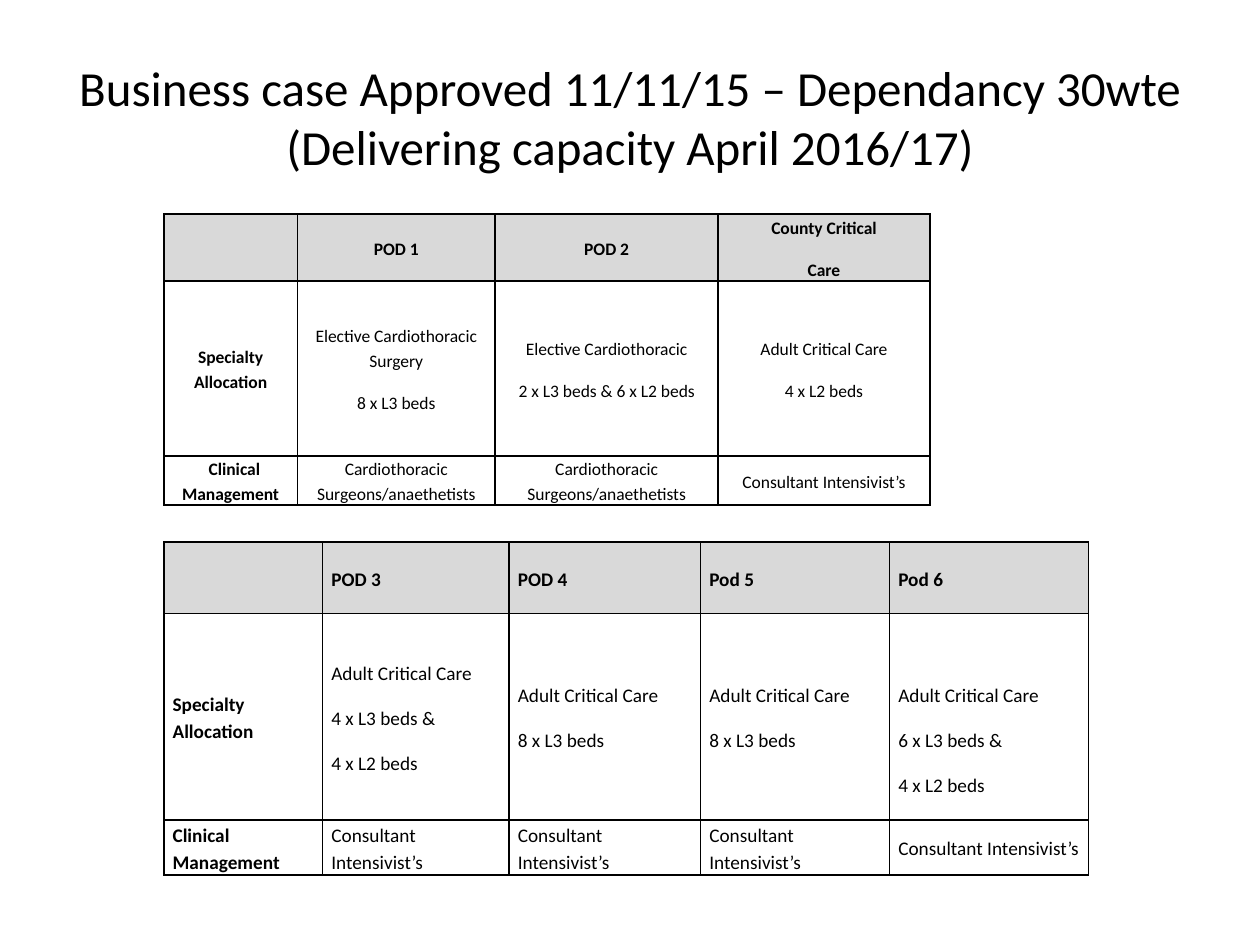
"""Build a slide with two tables of critical care pods and their beds."""
from lxml import etree
from pptx import Presentation, oxml, util as u
from pptx.dml.color import RGBColor
from pptx.enum import text as t
from pptx.oxml.ns import qn

TITLE = "Business case Approved 11/11/15 – Dependancy 30wte (Delivering capacity April 2016/17)"
ADULT = "Adult Critical Care"
SURGEON = "Cardiothoracic Surgeons/anaethetists"
LEAD = "Consultant Intensivist’s"
SIDES = ["Specialty Allocation", "Clinical Management"]

TABLES = [
    dict(
        top=1.7, size=10, align=t.PP_ALIGN.CENTER,
        cols=[1.06, 1.57, 1.77, 1.68], rows=[0.53, 1.39, 0.39],
        cells=[
            ["", "POD 1", "POD 2", "County Critical\nCare"],
            [SIDES[0], "Elective Cardiothoracic Surgery\n8 x L3 beds",
             "Elective Cardiothoracic\n2 x L3 beds & 6 x L2 beds", ADULT + "\n4 x L2 beds"],
            [SIDES[1], SURGEON, SURGEON, LEAD],
        ],
        indent={(2, 0): 0.06}, drop={},
    ),
    dict(
        top=4.3, size=11, align=t.PP_ALIGN.JUSTIFY,
        cols=[1.26, 1.48, 1.52, 1.5, 1.58], rows=[0.57, 1.64, 0.43],
        cells=[
            ["", "POD 3", "POD 4", "Pod 5", "Pod 6"],
            [SIDES[0], ADULT + "\n4 x L3 beds &\n4 x L2 beds", ADULT + "\n8 x L3 beds",
             ADULT + "\n8 x L3 beds", ADULT + "\n6 x L3 beds &\n4 x L2 beds"],
            [SIDES[1]] + [LEAD] * 4,
        ],
        indent={}, drop={(1, 4): 0.35},
    ),
]


def tint(code):
    return RGBColor.from_string(code)


def put(item, **vals):
    for name, val in vals.items():
        setattr(item, name, val)


def style(font, size, bold=False):
    put(font, name="Calibri", size=u.Pt(size), bold=bold)
    font.color.rgb = tint("000000")


def edge(cell):
    props = cell._tc.get_or_add_tcPr()
    for tag in ("a:lnL", "a:lnR", "a:lnT", "a:lnB"):
        line = etree.SubElement(props, qn(tag), w=str(u.Pt(1)))
        fill = etree.SubElement(line, qn("a:solidFill"))
        etree.SubElement(fill, qn("a:srgbClr"), val="000000")


def fill_cell(cell, words, row, col, data):
    spot = row, col
    put(cell, text=words, vertical_anchor=t.MSO_ANCHOR.MIDDLE,
        margin_left=u.Inches(0.07), margin_right=u.Inches(0.07),
        margin_top=u.Inches(data["drop"].get(spot, 0)), margin_bottom=0)
    edge(cell)
    cell.fill.solid()
    cell.fill.fore_color.rgb = tint("FFFFFF" if row else "D9D9D9")
    for para in cell.text_frame.paragraphs:
        put(para, alignment=data["align"], line_spacing=1.15, space_after=u.Pt(10))
        if spot in data["indent"]:
            para._p.get_or_add_pPr().set("indent", str(u.Inches(data["indent"][spot])))
        for run in para.runs:
            style(run.font, data["size"], row == 0 or col == 0)


def add_grid(slide, data):
    cols, rows = data["cols"], data["rows"]
    box = map(u.Inches, (1.3, data["top"], sum(cols), sum(rows)))
    grid = slide.shapes.add_table(len(rows), len(cols), *box).table
    put(grid, first_row=False, horz_banding=False)
    for col, wide in zip(grid.columns, cols):
        col.width = u.Inches(wide)
    for row, high in zip(grid.rows, rows):
        row.height = u.Inches(high)
    for r, line in enumerate(data["cells"]):
        for c, words in enumerate(line):
            fill_cell(grid.cell(r, c), words, r, c, data)


def main():
    deck = Presentation()
    put(deck, slide_width=u.Inches(10), slide_height=u.Inches(7.5))
    slide = deck.slides.add_slide(deck.slide_layouts[5])
    title = slide.shapes.title
    put(title, left=u.Inches(0.5), top=u.Inches(0.3), width=u.Inches(9), height=u.Inches(1.25))
    put(title.text_frame, text=TITLE, vertical_anchor=t.MSO_ANCHOR.MIDDLE, word_wrap=True)
    para = title.text_frame.paragraphs[0]
    para.alignment = t.PP_ALIGN.CENTER
    style(para.runs[0].font, 28)
    for data in TABLES:
        add_grid(slide, data)
    deck.save("out.pptx")


if __name__ == "__main__":
    main()
